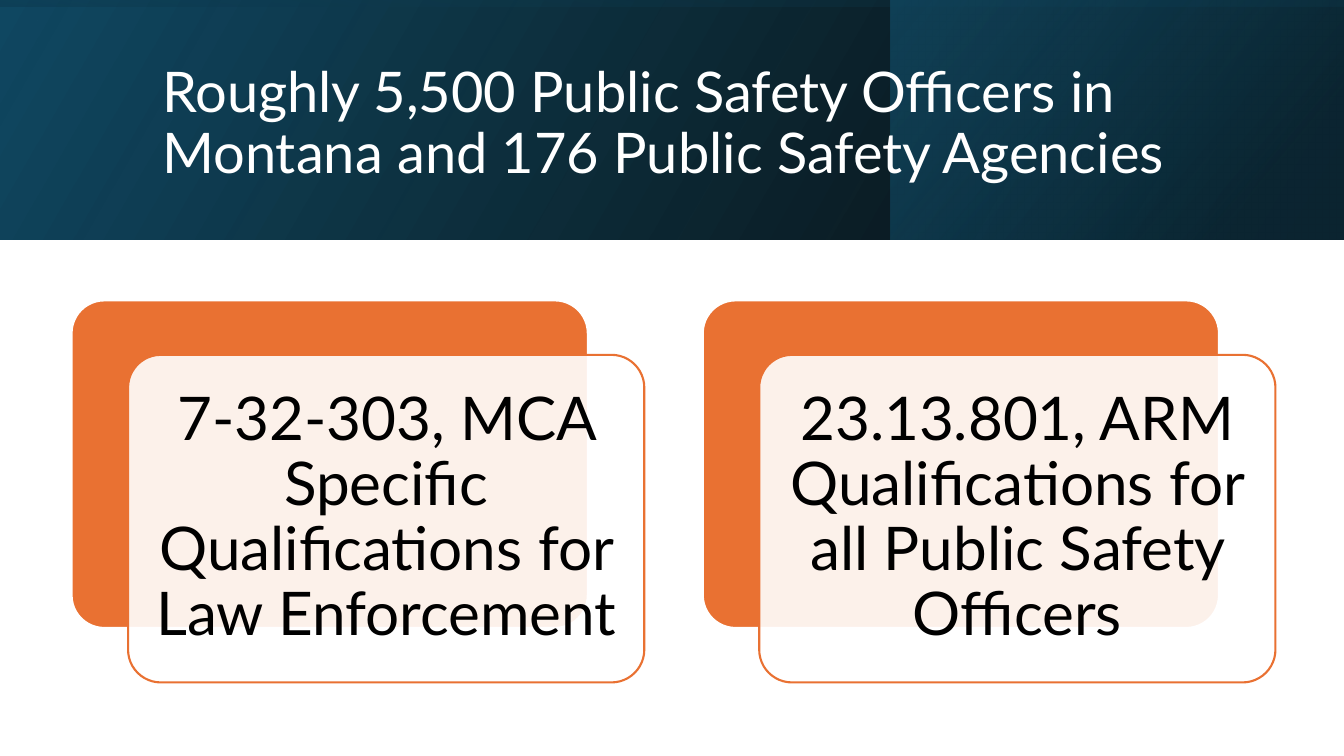
from lxml import etree
from pptx import Presentation
from pptx.dml.color import RGBColor
from pptx.enum.shapes import MSO_SHAPE
from pptx.enum.text import MSO_ANCHOR, MSO_AUTO_SIZE, PP_ALIGN
from pptx.oxml.ns import qn
from pptx.util import Pt

RECTANGLE, ROUNDED = MSO_SHAPE.RECTANGLE, MSO_SHAPE.ROUNDED_RECTANGLE
MIDDLE, NO_AUTOFIT = MSO_ANCHOR.MIDDLE, MSO_AUTO_SIZE.NONE
LEFT, CENTER = PP_ALIGN.LEFT, PP_ALIGN.CENTER

WHITE = RGBColor(0xFF, 0xFF, 0xFF)
BLACK = RGBColor(0x00, 0x00, 0x00)
ORANGE = RGBColor(0xE9, 0x71, 0x32)
NAVY = RGBColor(0x0B, 0x30, 0x41)
TEAL = RGBColor(0x10, 0x48, 0x62)
BRIGHT_TEAL = RGBColor(0x15, 0x60, 0x82)

EMU_PER_PX = 9144  # 100 px to the inch
SLIDE_WIDTH, SLIDE_HEIGHT = 1333, 750
BAND_HEIGHT = 238
SIDE_BAND_LEFT = 883
CARD_WIDTH, CARD_HEIGHT = 512, 325
CARD_LEFT, CARD_TOP, CARD_STEP = 71, 298, 626
CARD_SHIFT_X, CARD_SHIFT_Y = 56, 54
CARD_MARGIN = 18

QUALIFICATIONS = [
    "7-32-303, MCA Specific Qualifications for Law Enforcement",
    "23.13.801, ARM Qualifications for all Public Safety Officers",
]


def px(length):
    return int(length * EMU_PER_PX)


def set_opacity(shape, percents):
    """Give the fill colours of the shape, in order, their opacity."""
    fill_colors = shape.element.spPr.iter(qn("a:srgbClr"))
    for color, percent in zip(fill_colors, percents):
        etree.SubElement(color, qn("a:alpha")).set("val", str(percent * 1000))


class SlideBuilder:
    font_name = "Lato"
    line_spacing = 0.9

    def __init__(self, slide):
        self.slide = slide

    def shape(self, kind, left, top, width, height):
        shape = self.slide.shapes.add_shape(
            kind, px(left), px(top), px(width), px(height))
        shape.shadow.inherit = False
        return shape

    def gradient_band(self, left, width, angle, stops):
        """Stops are (position, colour, opacity); the angle is anticlockwise."""
        band = self.shape(RECTANGLE, left, 0, width, BAND_HEIGHT)
        band.line.fill.background()
        band.fill.gradient()
        band.fill.gradient_angle = angle
        for stop, (position, color, _) in zip(band.fill.gradient_stops, stops):
            stop.position = position
            stop.color.rgb = color
        set_opacity(band, [opacity for _, _, opacity in stops])

    def card(self, left, top, fill, line):
        card = self.shape(ROUNDED, left, top, CARD_WIDTH, CARD_HEIGHT)
        card.adjustments[0] = 0.1
        card.fill.solid()
        card.fill.fore_color.rgb = fill
        card.line.color.rgb = line
        card.line.width = Pt(1.5)
        return card

    def text(self, shape, text, size, color, align):
        frame = shape.text_frame
        frame.text = text
        frame.word_wrap = True
        frame.auto_size = NO_AUTOFIT
        frame.vertical_anchor = MIDDLE
        para = frame.paragraphs[0]
        para.alignment = align
        para.line_spacing = self.line_spacing
        font = para.runs[0].font
        font.name = self.font_name
        font.size = Pt(size)
        font.color.rgb = color

    def title(self, text, left, top, width, height):
        title = self.slide.shapes.title
        title.left, title.top = px(left), px(top)
        title.width, title.height = px(width), px(height)
        self.text(title, text, 40, WHITE, LEFT)
        # The title stands in front of the bands.
        title.element.getparent().append(title.element)

    def qualification(self, left, text):
        self.card(left, CARD_TOP, ORANGE, WHITE)
        front = self.card(left + CARD_SHIFT_X, CARD_TOP + CARD_SHIFT_Y,
                          WHITE, ORANGE)
        set_opacity(front, [90])
        frame = front.text_frame
        frame.margin_left = frame.margin_right = px(CARD_MARGIN)
        frame.margin_top = frame.margin_bottom = px(CARD_MARGIN)
        self.text(front, text, 43, BLACK, CENTER)


def main():
    deck = Presentation()
    deck.slide_width, deck.slide_height = px(SLIDE_WIDTH), px(SLIDE_HEIGHT)
    page = SlideBuilder(deck.slides.add_slide(deck.slide_layouts[5]))

    page.gradient_band(0, SLIDE_WIDTH, 150,
                       [(0, BLACK, 96), (1, TEAL, 100)])
    page.gradient_band(SIDE_BAND_LEFT, SLIDE_WIDTH - SIDE_BAND_LEFT, 140,
                       [(0.19, NAVY, 68), (1, BRIGHT_TEAL, 48)])
    page.gradient_band(0, SLIDE_WIDTH, 260,
                       [(0.23, TEAL, 16), (0.99, BLACK, 45)])
    page.title("Roughly 5,500 Public Safety Officers in Montana "
               "and 176 Public Safety Agencies", 151, 38, 1063, 172)
    for index, text in enumerate(QUALIFICATIONS):
        page.qualification(CARD_LEFT + index * CARD_STEP, text)

    deck.save("out.pptx")


if __name__ == "__main__":
    main()
